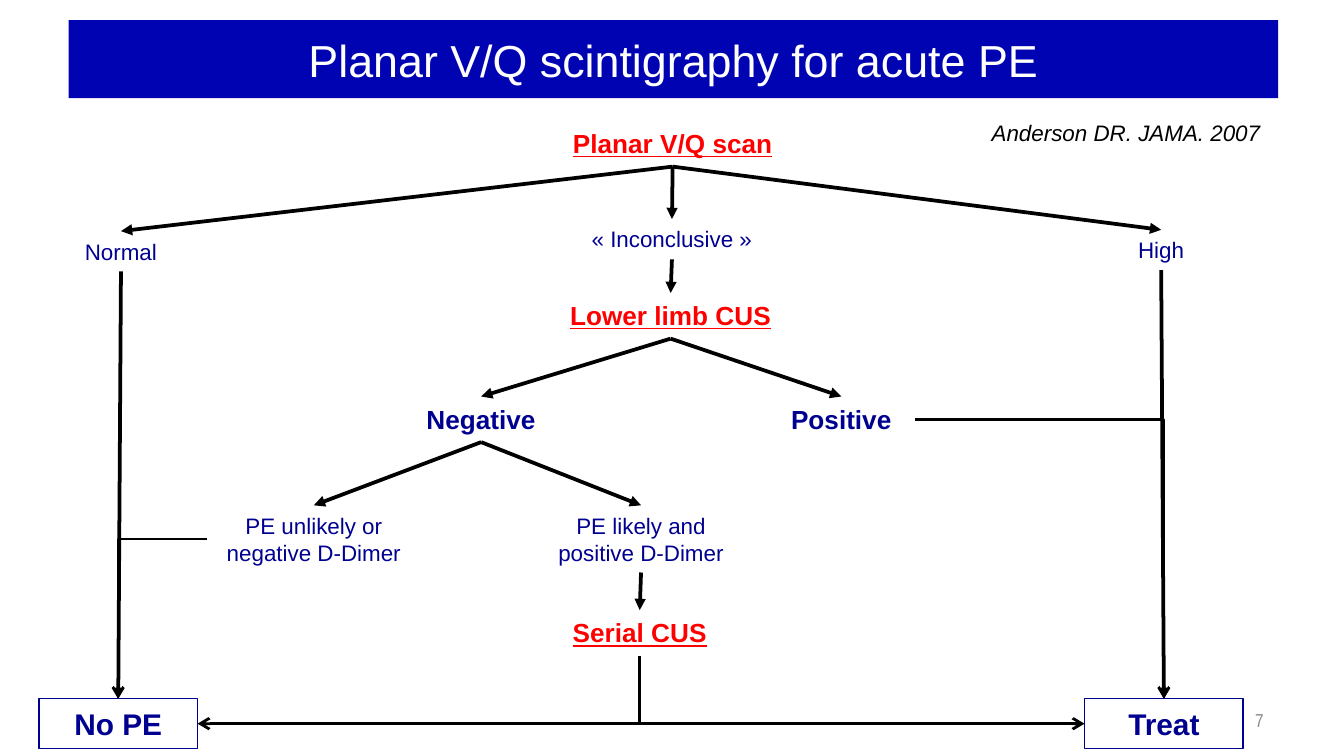
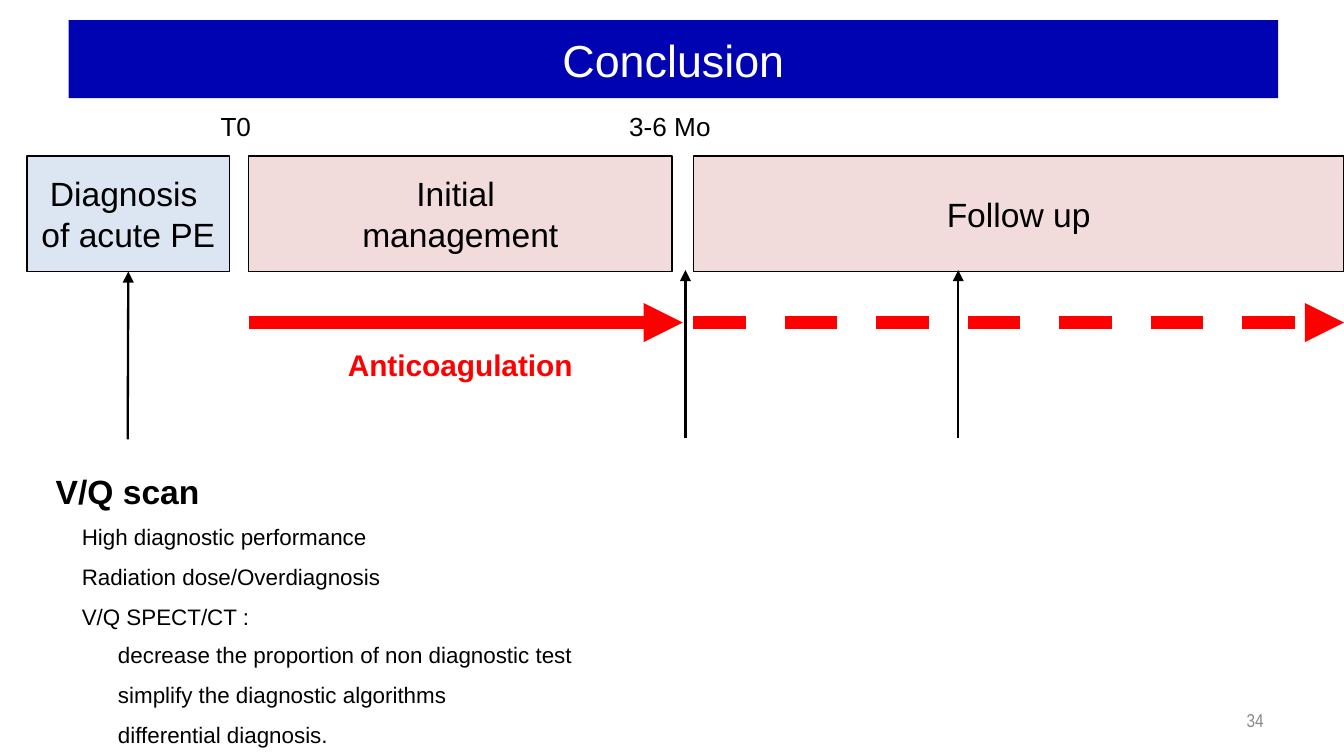
from dataclasses import dataclass

from pptx import Presentation, util as u
from pptx.dml.color import RGBColor
from pptx.enum import dml, shapes, text
from pptx.oxml.ns import qn
from lxml import etree


@dataclass(frozen=True)
class Theme:
    # Colours
    band: str = "0003B1"
    navy: str = "000090"
    red: str = "FF0000"
    black: str = "000000"
    white: str = "FFFFFF"
    grey: str = "898989"
    blue: str = "DCE6F2"
    pink: str = "F2DCDB"
    # Fonts and type sizes
    font: str = "Arial"
    narrow: str = "Arial Narrow"
    title: int = 24
    phase: int = 18
    result: int = 16
    step: int = 14
    body: int = 12
    page: int = 10


T = Theme()
LEFT, CENTER, RIGHT = text.PP_ALIGN.LEFT, text.PP_ALIGN.CENTER, text.PP_ALIGN.RIGHT
TOP, LEFTSIDE, BOTTOM, RIGHTSIDE = range(4)


def rgb(color):
    return RGBColor.from_string(color)


def write(shape, lines, size, color=T.black, align=CENTER, bold=False,
          under=False, italic=False, font=T.font, space=None, wrap=True,
          middle=False, grow=False):
    """Fill a shape with one paragraph per line of text."""
    frame = shape.text_frame
    frame.word_wrap = wrap
    frame.auto_size = (text.MSO_AUTO_SIZE.SHAPE_TO_FIT_TEXT if grow
                       else text.MSO_AUTO_SIZE.NONE)
    frame.vertical_anchor = (text.MSO_ANCHOR.MIDDLE if middle
                             else text.MSO_ANCHOR.TOP)
    for i, line in enumerate(lines.split("\n")):
        par = frame.add_paragraph() if i else frame.paragraphs[0]
        par.alignment = align
        if space:
            par.line_spacing = space
        run = par.add_run()
        run.text = line
        face = run.font
        face.name, face.size = font, u.Pt(size)
        face.bold, face.italic, face.underline = bold, italic, under
        face.color.rgb = rgb(color)


def label(slide, place, lines, size, color=T.black, grow=True, **look):
    """Plain text box."""
    box = slide.shapes.add_textbox(*map(u.Inches, place))
    write(box, lines, size, color, grow=grow, **look)
    return box


def panel(slide, place, lines, size, edge, fill=None, color=T.black, **look):
    """Outlined rectangle with text."""
    box = slide.shapes.add_shape(shapes.MSO_SHAPE.RECTANGLE,
                                 *map(u.Inches, place))
    box.shadow.inherit = False
    if fill:
        box.fill.solid()
        box.fill.fore_color.rgb = rgb(fill)
    else:
        box.fill.background()
    box.line.color.rgb = rgb(edge)
    box.line.width = u.Pt(0.75)
    write(box, lines, size, color, **look)
    return box


def arrow(slide, start, end, width, color=T.black, dash=False,
          tip="tailEnd", head="triangle", kind=shapes.MSO_CONNECTOR.STRAIGHT):
    """Connector with one arrowhead; tip is the end that carries it."""
    line = slide.shapes.add_connector(kind, *map(u.Inches, (*start, *end)))
    line.line.color.rgb = rgb(color)
    line.line.width = u.Pt(width)
    if dash:
        line.line.dash_style = dml.MSO_LINE.DASH
    props = line._element.spPr
    etree.SubElement(props.find(qn("a:ln")), qn("a:" + tip), type=head)
    etree.SubElement(props, qn("a:effectLst"))
    return line


def flow(slide, start, end):
    """Straight arrow from the bottom of one box to the top of the next."""
    line = arrow(slide, (0, 0), (1, 1), 2)
    line.begin_connect(start, BOTTOM)
    line.end_connect(end, TOP)


def elbow(slide, start, side, end, goal, tip="tailEnd"):
    """One-bend connector that leaves its start horizontally."""
    line = arrow(slide, (0, 0), (1, 1), 1.5, tip=tip, head="arrow",
                 kind=shapes.MSO_CONNECTOR.ELBOW)
    line._element.spPr.find(qn("a:prstGeom")).set("prst", "bentConnector2")
    line.begin_connect(start, side)
    line.end_connect(end, goal)


def page(deck, title, number):
    """Title-only slide with the blue band and page number."""
    slide = deck.slides.add_slide(deck.slide_layouts[5])
    band = slide.shapes.title
    band.left, band.top, band.width, band.height = map(
        u.Inches, (0.51, 0.15, 9, 0.58))
    band.fill.solid()
    band.fill.fore_color.rgb = rgb(T.band)
    write(band, title, T.title, T.white, middle=True)
    label(slide, (8.94, 5.21, 0.56, 0.3), number, T.page, T.grey, grow=False,
          align=RIGHT, font=T.narrow, middle=True)
    return slide


def scan(deck):
    slide = page(deck, "Planar V/Q scintigraphy for acute PE", "7")

    def test(place, name):
        return label(slide, place, name, T.step, T.red, bold=True, under=True)

    def sign(place, name):
        return label(slide, place, name, T.step, T.navy, bold=True)

    def note(place, name):
        return label(slide, place, name, T.body, T.navy)

    def result(left, name):
        return panel(slide, (left, 5.2, 1.18, 0.37), name, T.result, T.navy,
                     color=T.navy, bold=True, grow=True)

    # Decision tree, from top to bottom
    planar = test((4.06, 0.9, 1.89, 0.34), "Planar V/Q scan")
    normal = note((0.43, 1.72, 0.94, 0.3), "Normal")
    unsure = note((4.27, 1.63, 1.46, 0.3), "« Inconclusive »")
    high = note((8.11, 1.71, 1.06, 0.3), "High")
    limb = test((3.97, 2.18, 2.04, 0.34), "Lower limb CUS")
    minus = sign((3.03, 2.95, 1.1, 0.34), "Negative")
    plus = sign((5.71, 2.95, 1.1, 0.34), "Positive")
    low = note((1.54, 3.76, 1.59, 0.5), "PE unlikely or negative D-Dimer")
    likely = note((3.99, 3.76, 1.56, 0.5), "PE likely and positive D-Dimer")
    serial = test((3.74, 4.54, 2.04, 0.34), "Serial CUS")
    clear = result(0.29, "No PE")
    treat = result(8.07, "Treat")

    # Straight arrows
    for start, end in ((planar, normal), (planar, unsure), (planar, high),
                       (unsure, limb), (limb, minus), (limb, plus),
                       (minus, low), (minus, likely), (likely, serial),
                       (normal, clear), (high, treat)):
        flow(slide, start, end)

    # Bent arrows to the two results
    elbow(slide, plus, RIGHTSIDE, treat, TOP)
    elbow(slide, low, LEFTSIDE, clear, TOP)
    elbow(slide, clear, RIGHTSIDE, serial, BOTTOM, tip="headEnd")
    elbow(slide, treat, LEFTSIDE, serial, BOTTOM, tip="headEnd")

    # Source
    label(slide, (7.28, 0.84, 2.22, 0.3), "Anderson DR. JAMA. 2007", T.body,
          align=LEFT, italic=True, wrap=False)


def closing(deck):
    slide = page(deck, "Conclusion", "34")

    # Phases and time marks
    def phase(left, width, name, fill=T.pink, wrap=True):
        return panel(slide, (left, 1.16, width, 0.86), name, T.phase, T.black,
                     fill, middle=True, wrap=wrap)

    acute = phase(0.2, 1.51, "Diagnosis \nof acute PE", T.blue, wrap=False)
    phase(1.85, 3.15, "Initial \nmanagement")
    phase(5.16, 4.84, "Follow up")
    for left, width, mark in ((1.54, 0.43, "T0"), (4.58, 0.81, "3-6 Mo")):
        label(slide, (left, 0.77, width, 0.34), mark, T.step, wrap=False)

    # Treatment arrows
    for left, right, dash in ((1.85, 5.08, False), (5.16, 10, True)):
        arrow(slide, (left, 2.4), (right, 2.4), 7, T.red, dash)
    label(slide, (2.48, 2.4, 1.89, 0.45), "Anticoagulation", T.result, T.red,
          bold=True, space=1.5)

    # Scan times
    vq = label(slide, (0.28, 3.27, 1.34, 0.62), "V/Q scan", T.phase,
               grow=False, bold=True, space=1.5, middle=True)
    first = arrow(slide, (0.95, 3.27), (0.95, 2.02), 1.25)
    first.begin_connect(vq, TOP)
    first.end_connect(acute, BOTTOM)
    for x in (5.1, 7.13):
        arrow(slide, (x, 3.26), (x, 2.01), 1.25)

    # Findings
    for place, lines in (
        ((0.51, 3.74, 2.48, 0.97),
         "High diagnostic performance\n"
         "Radiation dose/Overdiagnosis\n"
         "V/Q SPECT/CT :"),
        ((0.78, 4.62, 3.67, 1.01),
         "decrease the proportion of non diagnostic test\n"
         "simplify the diagnostic algorithms\n"
         "differential diagnosis."),
    ):
        label(slide, place, lines, T.body, align=LEFT, space=1.5, wrap=False)


def main():
    # Widescreen, 16 to 9
    deck = Presentation()
    deck.slide_width = u.Inches(10)
    deck.slide_height = deck.slide_width * 9 // 16
    scan(deck)
    closing(deck)
    deck.save("out.pptx")


if __name__ == "__main__":
    main()
